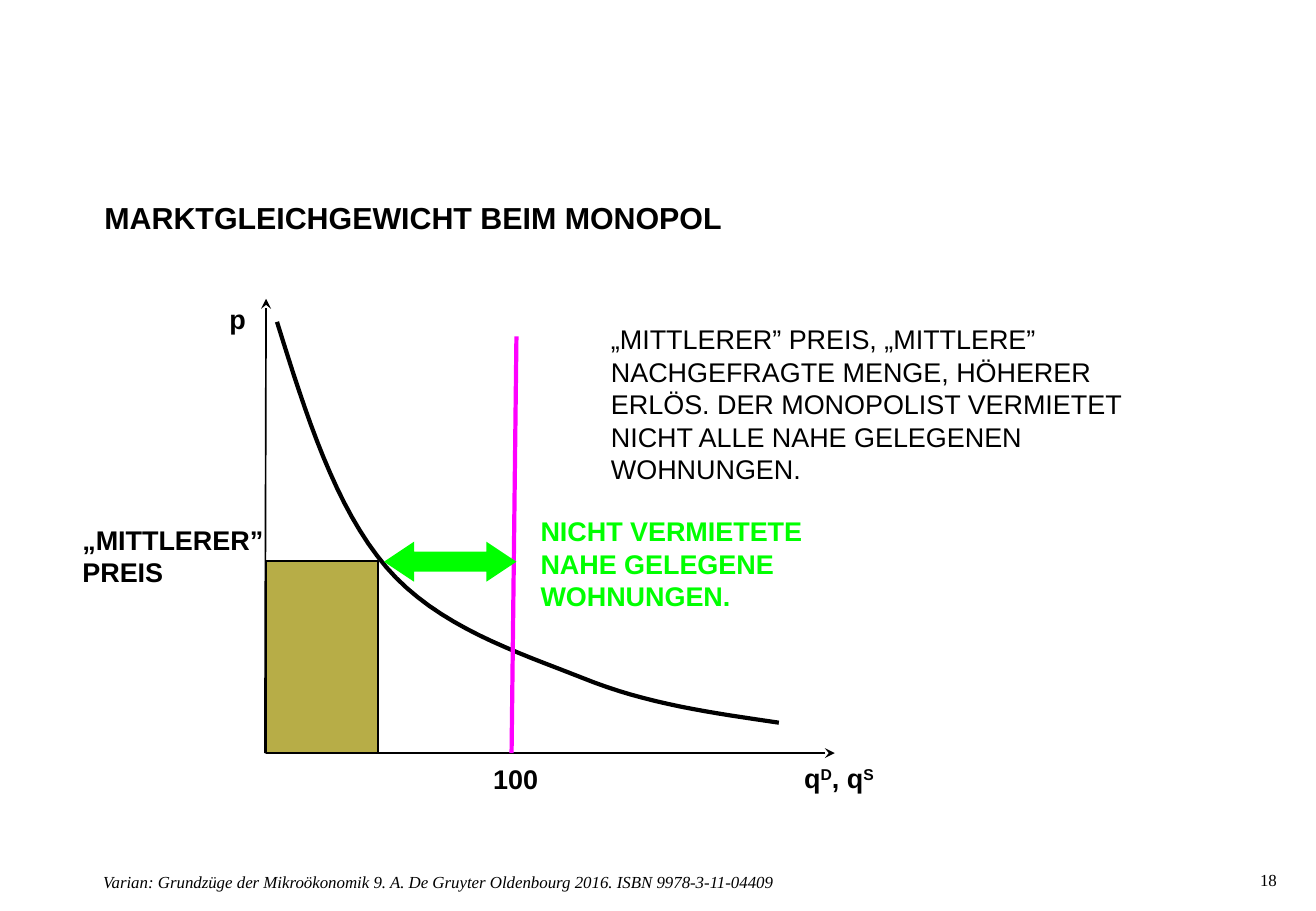
from dataclasses import dataclass

from lxml import etree
from pptx import Presentation
from pptx.dml.color import RGBColor
from pptx.enum.shapes import MSO_CONNECTOR, MSO_SHAPE
from pptx.enum.text import MSO_ANCHOR, PP_ALIGN
from pptx.oxml.ns import qn
from pptx.util import Inches, Pt


@dataclass(frozen=True)
class Theme:
    black: RGBColor = RGBColor(0, 0, 0)
    olive: RGBColor = RGBColor(0xB7, 0xAD, 0x47)
    magenta: RGBColor = RGBColor(0xFF, 0, 0xFF)
    green: RGBColor = RGBColor(0, 0xFF, 0)
    sans: str = "Arial"
    serif: str = "Times New Roman"
    title: int = 18
    body: int = 16
    small: int = 10
    thin: float = 1
    thick: float = 2.5


THEME = Theme()


def style_run(r, size, font=THEME.sans, color=THEME.black, bold=False, italic=False):
    r.font.size, r.font.name = Pt(size), font
    r.font.bold, r.font.italic = bold, italic
    r.font.color.rgb = color


def set_insets(tf, left=0, top=0, right=0, bottom=0):
    tf.margin_left, tf.margin_top = Inches(left), Inches(top)
    tf.margin_right, tf.margin_bottom = Inches(right), Inches(bottom)


def add_text(s, box, text, size=THEME.body, wrap=True, inset=True, **style):
    tb = s.shapes.add_textbox(*map(Inches, box))
    tf = tb.text_frame
    tf.text, tf.word_wrap = text, wrap
    if not inset:
        set_insets(tf)
    for p in tf.paragraphs:
        for r in p.runs:
            style_run(r, size, **style)
    return tb


def add_line(s, start, end, color, width, arrow=False):
    line = s.shapes.add_connector(MSO_CONNECTOR.STRAIGHT, *map(Inches, start + end))
    line.line.color.rgb, line.line.width = color, Pt(width)
    if arrow:
        etree.SubElement(line.line._get_or_add_ln(), qn("a:headEnd"), type="stealth")
    etree.SubElement(line._element.spPr, qn("a:effectLst"))


def add_area(s, kind, box, fill):
    sp = s.shapes.add_shape(kind, *map(Inches, box))
    sp.shadow.inherit = False
    sp.fill.solid()
    sp.fill.fore_color.rgb = fill
    sp.line.fill.background()
    return sp


def bezier_points(start, segments, steps=16):
    """Sample a chain of cubic segments, each given as two controls and an end."""
    for c1, c2, end in segments:
        for i in range(1, steps + 1):
            t = i / steps
            u = 1 - t
            yield tuple(u**3 * a + 3 * u * u * t * b + 3 * u * t * t * c + t**3 * d
                        for a, b, c, d in zip(start, c1, c2, end))
        start = end


def add_demand_curve(s, left, top):
    start = (0.09, 0.19)
    segments = [
        ((0.33, 0.96), (0.57, 1.72), (0.99, 2.21)),
        ((1.41, 2.70), (2.07, 2.91), (2.60, 3.12)),
        ((3.14, 3.34), (3.68, 3.41), (4.22, 3.49)),
    ]

    def place(x, y):
        return Inches(left + x), Inches(top + y)

    builder = s.shapes.build_freeform(*place(*start))
    builder.add_line_segments([place(*pt) for pt in bezier_points(start, segments)], close=False)
    curve = builder.convert_to_shape()
    curve.shadow.inherit = False
    curve.fill.background()
    curve.line.color.rgb, curve.line.width = THEME.black, Pt(THEME.thick)


def add_title(s, box):
    title = s.shapes.title
    title.left, title.top, title.width, title.height = map(Inches, box)
    tf = title.text_frame
    tf.text = "MARKTGLEICHGEWICHT BEIM MONOPOL"
    set_insets(tf, right=0.16)
    tf.vertical_anchor = MSO_ANCHOR.TOP
    p = tf.paragraphs[0]
    p.alignment = PP_ALIGN.LEFT
    style_run(p.runs[0], THEME.title, bold=True)


def add_axis_name(s, box):
    p = add_text(s, box, "", wrap=False).text_frame.paragraphs[0]
    for text, raised in (("q", False), ("D", True), (", q", False), ("S", True)):
        r = p.add_run()
        r.text = text
        style_run(r, THEME.body, bold=True)
        if raised:
            r.font._element.set("baseline", "30000")


def add_diagram(s, box):
    """Price-quantity diagram; the box is spanned by the two axes."""
    left, top, width, height = box
    bottom = top + height
    price_y = bottom - 1.58
    supply_x = left + 2.06

    add_line(s, (left, top), (left - 0.01, bottom), THEME.black, THEME.thin, arrow=True)
    add_line(s, (left + width, bottom), (left, bottom), THEME.black, THEME.thin, arrow=True)
    add_demand_curve(s, left, top)
    revenue = add_area(s, MSO_SHAPE.RECTANGLE, (left, price_y, 0.92, bottom - price_y), THEME.olive)
    revenue.line.color.rgb, revenue.line.width = THEME.black, Pt(THEME.thin)
    add_line(s, (supply_x - 0.04, bottom), (supply_x, top + 0.31), THEME.magenta, THEME.thick)

    add_text(s, (left - 1.61, price_y - 0.36, 1.7, 0.64), "„MITTLERER”\nPREIS", bold=True)
    add_text(s, (left - 0.4, top - 0.02, 0.34, 0.37), "p", wrap=False, bold=True)
    add_axis_name(s, (left + width - 0.35, bottom + 0.02, 0.81, 0.37))
    add_text(s, (supply_x - 0.29, bottom + 0.03, 0.58, 0.37), "100", wrap=False, bold=True)

    gap = add_area(s, MSO_SHAPE.LEFT_RIGHT_ARROW,
                   (supply_x - 1.09, price_y - 0.16, 1.09, 0.33), THEME.green)
    gap.adjustments[0], gap.adjustments[1] = 0.5, 0.75
    add_text(s, (supply_x + 0.1, price_y - 0.43, 2.88, 0.91),
             "NICHT VERMIETETE NAHE GELEGENE WOHNUNGEN.", color=THEME.green, bold=True)


def add_explanation(s, box):
    add_text(s, box, "„MITTLERER” PREIS, „MITTLERE” NACHGEFRAGTE MENGE, HÖHERER ERLÖS. "
                     "DER MONOPOLIST VERMIETET NICHT ALLE NAHE GELEGENEN WOHNUNGEN.")


def add_footer(s, box):
    left, top, width, height = box
    number_width = 0.39
    number_left = left + width - number_width
    add_text(s, (number_left, top - 0.02, number_width, height), "18",
             THEME.small, inset=False, font=THEME.serif)
    add_text(s, (left, top, 9.4, height),
             "Varian: Grundzüge der Mikroökonomik 9. A. De Gruyter Oldenbourg 2016. "
             "ISBN 9978-3-11-04409",
             THEME.small, inset=False, font=THEME.serif, italic=True)


def main():
    prs = Presentation()
    prs.slide_width, prs.slide_height = Inches(10.83), Inches(7.5)
    s = prs.slides.add_slide(prs.slide_layouts[5])
    add_title(s, (0.86, 1.64, 9.51, 0.54))
    add_footer(s, (0.85, 7.18, 9.91, 0.2))
    add_diagram(s, (2.19, 2.46, 4.68, 3.74))
    add_explanation(s, (4.93, 2.61, 4.56, 1.45))
    prs.save("out.pptx")


if __name__ == "__main__":
    main()
